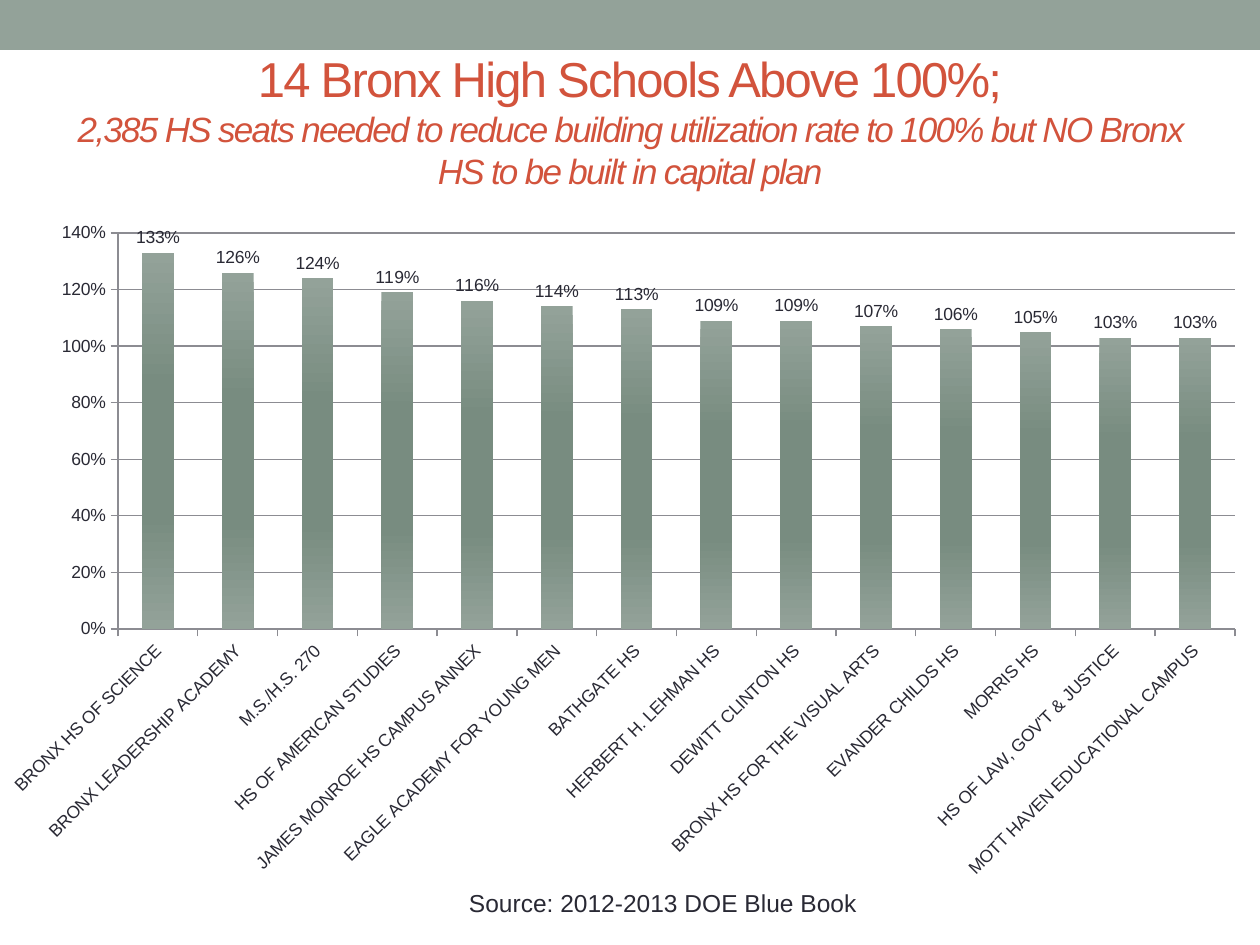
from copy import deepcopy
from dataclasses import dataclass

from lxml import etree
from pptx import Presentation
from pptx.chart.data import CategoryChartData
from pptx.dml.color import RGBColor
from pptx.enum.chart import XL_CHART_TYPE, XL_LABEL_POSITION, XL_TICK_MARK
from pptx.enum.shapes import MSO_SHAPE
from pptx.enum.text import MSO_ANCHOR, PP_ALIGN
from pptx.oxml import parse_xml
from pptx.oxml.ns import nsdecls, qn
from pptx.util import Emu, Pt

COLUMN = XL_CHART_TYPE.COLUMN_CLUSTERED
OUT_END = XL_LABEL_POSITION.OUTSIDE_END
OUTSIDE = XL_TICK_MARK.OUTSIDE
RECT = MSO_SHAPE.RECTANGLE
MIDDLE = MSO_ANCHOR.MIDDLE
TOP = MSO_ANCHOR.TOP
CENTER = PP_ALIGN.CENTER


@dataclass(frozen=True)
class Theme:
    font: str = "Arial"
    sage: str = "93A299"
    moss: str = "788C80"
    rust: str = "D2533C"
    ink: str = "292934"
    rule: str = "8C8C92"
    head: int = 28
    sub: int = 20
    note: int = 14
    label: int = 10


SCHOOLS = [
    ("BRONX HS OF SCIENCE", 1.33),
    ("BRONX LEADERSHIP ACADEMY", 1.26),
    ("M.S./H.S. 270", 1.24),
    ("HS OF AMERICAN STUDIES", 1.19),
    ("JAMES MONROE HS CAMPUS ANNEX", 1.16),
    ("EAGLE ACADEMY FOR YOUNG MEN", 1.14),
    ("BATHGATE HS", 1.13),
    ("HERBERT H. LEHMAN HS", 1.09),
    ("DEWITT CLINTON HS", 1.09),
    ("BRONX HS FOR THE VISUAL ARTS", 1.07),
    ("EVANDER CHILDS HS", 1.06),
    ("MORRIS HS", 1.05),
    ("HS OF LAW, GOV'T & JUSTICE", 1.03),
    ("MOTT HAVEN EDUCATIONAL CAMPUS", 1.03),
]


def px(n):
    return Emu(round(n * 914400 / 126))


def rgb(code):
    return RGBColor.from_string(code)


def write(para, text, *, font, size, color, italic=False, track=0):
    run = para.add_run()
    run.text = text
    face = run.font
    face.name, face.size, face.italic = font, Pt(size), italic
    face.color.rgb = rgb(color)
    if track:
        run._r.get_or_add_rPr().set("spc", str(track))


class Deck:
    def __init__(self, theme):
        self.theme = theme
        self.prs = Presentation()
        self.prs.slide_width, self.prs.slide_height = px(1260), px(945)
        self.slide = self.prs.slides.add_slide(self.prs.slide_layouts[5])

    def band(self, x, y, w, h):
        band = self.slide.shapes.add_shape(RECT, px(x), px(y), px(w), px(h))
        band.shadow.inherit = False
        band.fill.solid()
        band.fill.fore_color.rgb = rgb(self.theme.sage)
        band.line.fill.background()

    def title(self, x, y, w, h, head, sub, foot):
        t = self.theme
        shape = self.slide.shapes.title
        shape.left, shape.top, shape.width, shape.height = map(px, (x, y, w, h))
        frame = shape.text_frame
        frame.word_wrap = True
        frame.vertical_anchor = MIDDLE
        frame.margin_top, frame.margin_bottom = 0, px(foot)
        para = frame.paragraphs[0]
        para.alignment = CENTER
        write(para, head, font=t.font, size=t.head, color=t.rust, track=-100)
        para.add_line_break()
        write(para, sub, font=t.font, size=t.sub, color=t.rust,
              italic=True, track=-100)

    def note(self, x, y, w, h, text):
        t = self.theme
        box = self.slide.shapes.add_textbox(px(x), px(y), px(w), px(h))
        frame = box.text_frame
        frame.word_wrap = True
        frame.vertical_anchor = TOP
        para = frame.paragraphs[0]
        para.alignment = CENTER
        write(para, text, font=t.font, size=t.note, color=t.ink)

    def columns(self, x, y, w, h, rows, plot):
        t = self.theme
        data = CategoryChartData(number_format="0%")
        data.categories = [name for name, _ in rows]
        data.add_series("Series 1", [rate for _, rate in rows])
        chart = self.slide.shapes.add_chart(
            COLUMN, px(x), px(y), px(w), px(h), data).chart
        chart.has_legend = chart.has_title = False
        chart.font.name, chart.font.size = t.font, Pt(t.label)
        chart.font.color.rgb = rgb(t.ink)

        # Axes and grid
        for axis in (chart.category_axis, chart.value_axis):
            axis.major_tick_mark = OUTSIDE
            axis.format.line.color.rgb = rgb(t.rule)
            axis.tick_labels.font.size = Pt(t.label)
        turn = chart.category_axis._element.find(qn("c:txPr"))
        turn.find(qn("a:bodyPr")).set("rot", "-2700000")
        rates = chart.value_axis
        rates.minimum_scale, rates.maximum_scale = 0, 1.4
        rates.major_unit = 0.2
        rates.tick_labels.number_format = "0%"
        rates.tick_labels.number_format_is_linked = False
        rates.has_major_gridlines = True
        rates.major_gridlines.format.line.color.rgb = rgb(t.rule)

        # Bars and labels
        bars = chart.plots[0]
        bars.gap_width = 150
        bars.vary_by_categories = False
        self.shade(bars.series[0].format.fill)
        bars.has_data_labels = True
        tags = bars.data_labels
        tags.show_value = True
        tags.position = OUT_END
        tags.number_format, tags.number_format_is_linked = "0%", False

        # Inner plot area, as shares of the chart frame
        left, top, wide, high = plot
        parts = {"x": (left - x) / w, "y": (top - y) / h,
                 "w": wide / w, "h": high / h}
        area = chart._chartSpace.chart.plotArea
        for old in area.findall(qn("c:layout")):
            area.remove(old)
        layout = parse_xml(f"<c:layout {nsdecls('c')}><c:manualLayout>"
                           '<c:layoutTarget val="inner"/><c:xMode val="edge"/>'
                           '<c:yMode val="edge"/></c:manualLayout></c:layout>')
        for key, share in parts.items():
            etree.SubElement(layout[0], qn(f"c:{key}")).set("val", f"{share:.4f}")
        area.insert(0, layout)

    def shade(self, fill):
        t = self.theme
        fill.gradient()
        fill.gradient_angle = 270
        stops = fill.gradient_stops
        for stop in stops:
            stop.color.rgb = rgb(t.sage)
        stops[0].position, stops[1].position = 0, 1
        first = stops[0]._gs
        for spot in (0.7, 0.35):
            first.addnext(deepcopy(first))
            stop = fill.gradient_stops[1]
            stop.position = spot
            stop.color.rgb = rgb(t.moss)


def main():
    deck = Deck(Theme())

    # Header
    deck.band(0, 0, 1260, 50)
    deck.title(63, 73, 1134, 136, "14 Bronx High Schools Above 100%;",
               "2,385 HS seats needed to reduce building utilization rate "
               "to 100% but NO Bronx HS to be built in capital plan", 42)

    # Source line
    deck.note(66, 882, 1194, 43, "Source: 2012-2013 DOE Blue Book")

    # Utilization by school
    deck.columns(-14, 210, 1274, 683, SCHOOLS, (118, 233, 1117, 396))

    deck.prs.save("out.pptx")


if __name__ == "__main__":
    main()
